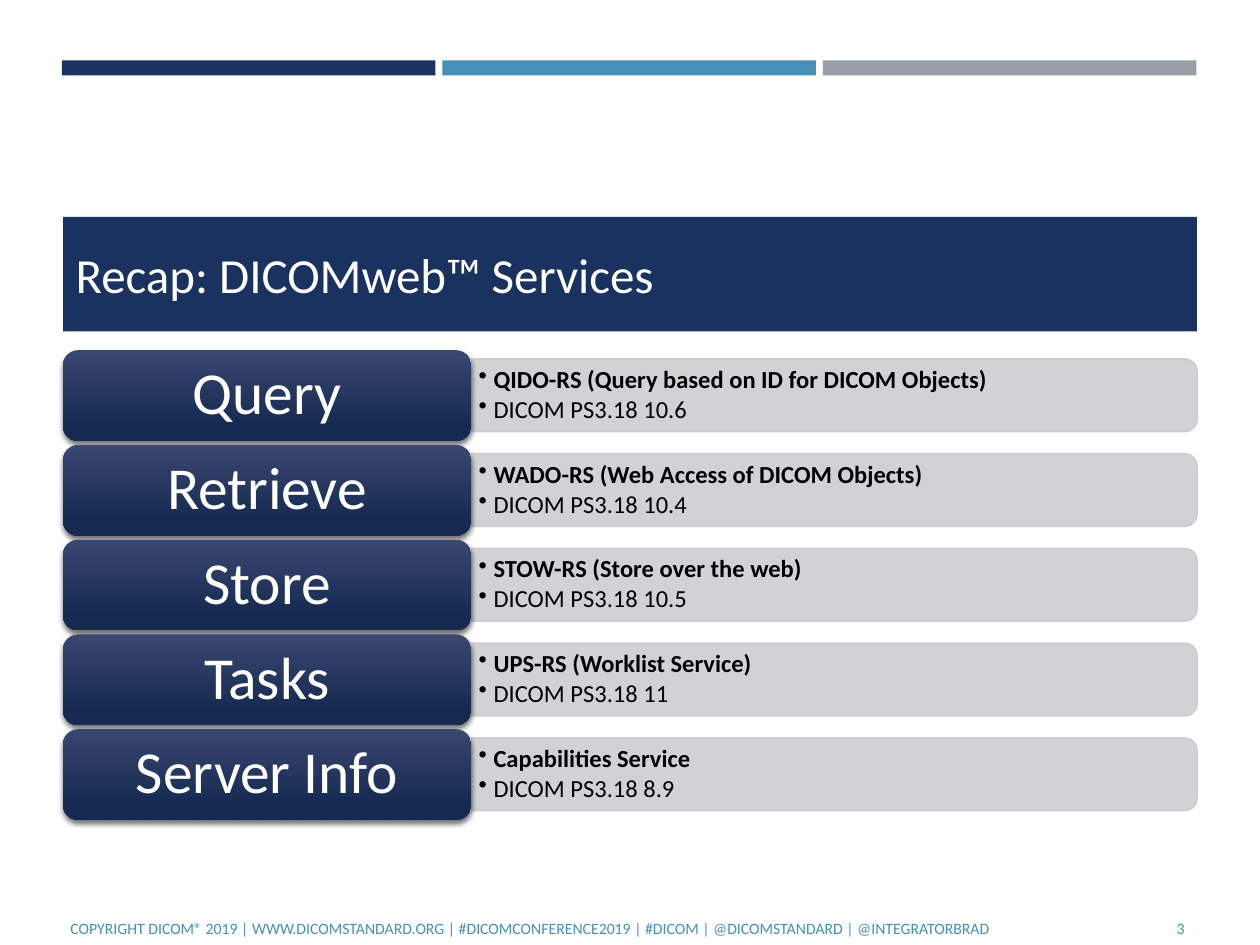
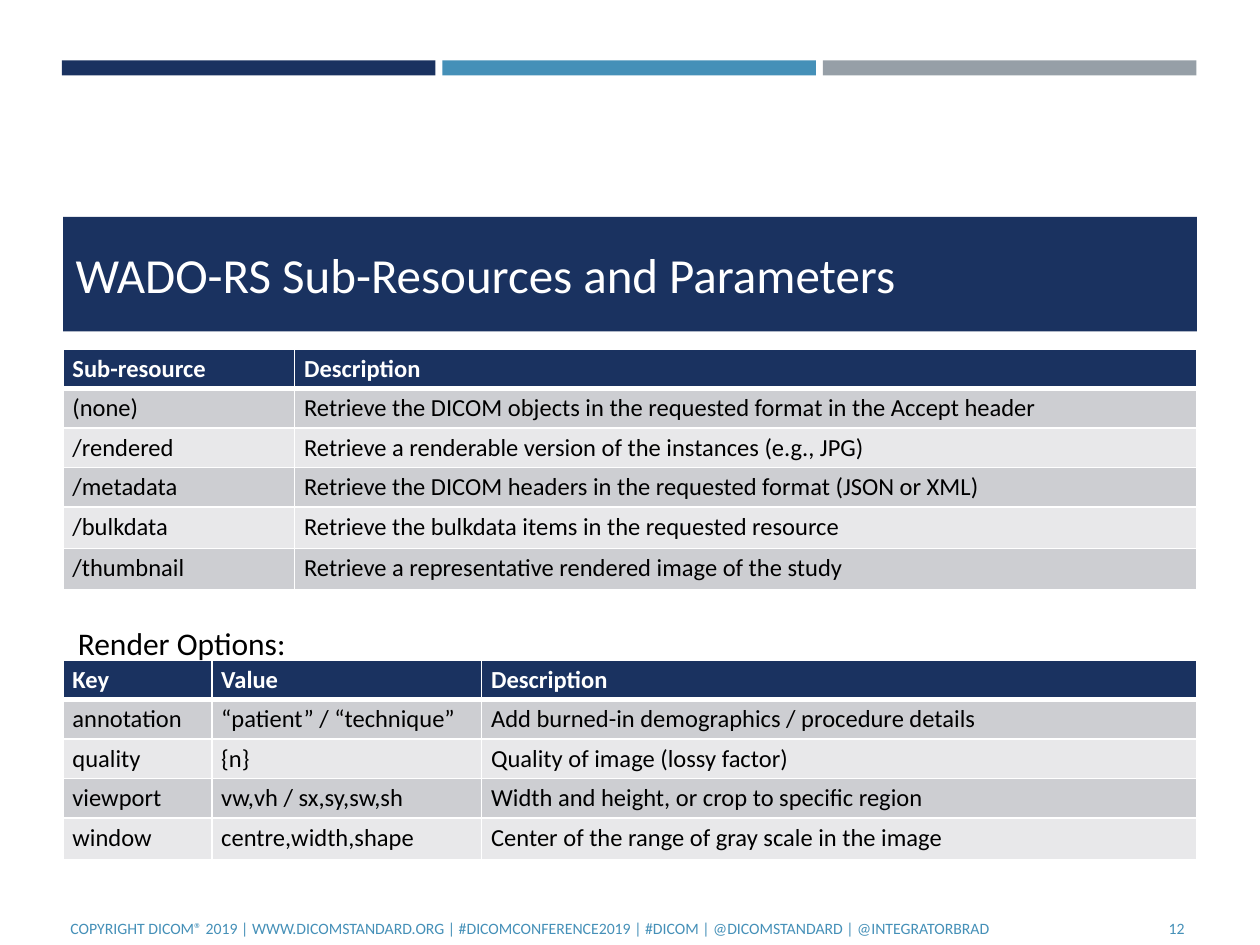
"""Build two slides on DICOMweb services and WADO-RS parameters."""
from dataclasses import dataclass

import lxml.etree
import pptx
import pptx.dml.color
import pptx.enum.dml
import pptx.enum.shapes
import pptx.enum.text
import pptx.oxml.ns
import pptx.util

Cm = pptx.util.Cm
Pt = pptx.util.Pt
RGBColor = pptx.dml.color.RGBColor
MSO_SHAPE = pptx.enum.shapes.MSO_SHAPE
PP_ALIGN = pptx.enum.text.PP_ALIGN
MSO_ANCHOR = pptx.enum.text.MSO_ANCHOR
qn = pptx.oxml.ns.qn

NAVY = RGBColor(0x1A, 0x32, 0x60)
BLUE = RGBColor(0x45, 0x90, 0xB8)
GRAY = RGBColor(0x96, 0x9F, 0xA7)
BAND_DARK = RGBColor(0xCD, 0xCE, 0xD2)
BAND_LIGHT = RGBColor(0xE8, 0xE8, 0xEA)
LABEL_TOP = RGBColor(0x39, 0x47, 0x71)
LABEL_BOTTOM = RGBColor(0x16, 0x2A, 0x51)
WHITE = RGBColor(0xFF, 0xFF, 0xFF)
BLACK = RGBColor(0, 0, 0)

FONT = "Calibri"
MARGIN = 1.27
CONTENT_WIDTH = 22.86
FOOTER = (
    "COPYRIGHT DICOM® 2019 | WWW.DICOMSTANDARD.ORG | #DICOMCONFERENCE2019 | "
    "#DICOM | @DICOMSTANDARD | @INTEGRATORBRAD"
)


@dataclass(frozen=True)
class Box:
    """A place on the slide in centimetres."""
    left: float
    top: float
    width: float
    height: float

    def emu(self) -> tuple:
        """Return the place as lengths."""
        return Cm(self.left), Cm(self.top), Cm(self.width), Cm(self.height)


@dataclass(frozen=True)
class Service:
    """One service with its label and two details."""
    label: str
    name: str
    section: str


@dataclass(frozen=True)
class Grid:
    """A table with its top, column widths, row heights and texts."""
    top: float
    widths: tuple
    heights: tuple
    rows: tuple


SERVICES = (
    Service("Query", "QIDO-RS (Query based on ID for DICOM Objects)", "DICOM PS3.18 10.6"),
    Service("Retrieve", "WADO-RS (Web Access of DICOM Objects)", "DICOM PS3.18 10.4"),
    Service("Store", "STOW-RS (Store over the web)", "DICOM PS3.18 10.5"),
    Service("Tasks", "UPS-RS (Worklist Service)", "DICOM PS3.18 11"),
    Service("Server Info", "Capabilities Service", "DICOM PS3.18 8.9"),
)

RENDER_OPTIONS = Grid(
    13.31, (3.0, 5.44, 14.42), (0.79,) * 4 + (0.84,),
    (
        ("Key", "Value", "Description"),
        ("annotation", "“patient” / “technique”", "Add burned-in demographics / procedure details"),
        ("quality", "{n}", "Quality of image (lossy factor)"),
        ("viewport", "vw,vh / sx,sy,sw,sh", "Width and height, or crop to specific region"),
        ("window", "centre,width,shape", "Center of the range of gray scale in the image"),
    ),
)

SUB_RESOURCES = Grid(
    7.04, (4.67, 18.19), (0.79,) * 4 + (0.84,) * 2,
    (
        ("Sub-resource", "Description"),
        ("(none)", "Retrieve the DICOM objects in the requested format in the Accept header"),
        ("/rendered", "Retrieve a renderable version of the instances (e.g., JPG)"),
        ("/metadata", "Retrieve the DICOM headers in the requested format (JSON or XML)"),
        ("/bulkdata", "Retrieve the bulkdata items in the requested resource"),
        ("/thumbnail", "Retrieve a representative rendered image of the study"),
    ),
)


def format_runs(p, size: float, color: RGBColor, bold: bool = False) -> None:
    """Set the font of every run in a paragraph."""
    for r in p.runs:
        r.font.name = FONT
        r.font.size = Pt(size)
        r.font.bold = bold
        r.font.color.rgb = color


def set_insets(tf, side: float, end: float) -> None:
    """Set the left and right, then top and bottom insets."""
    tf.margin_left = tf.margin_right = Cm(side)
    tf.margin_top = tf.margin_bottom = Cm(end)


def add_filled(slide, kind, box: Box, color: RGBColor):
    """Add a flat shape without outline."""
    sp = slide.shapes.add_shape(kind, *box.emu())
    sp.shadow.inherit = False
    sp.fill.solid()
    sp.fill.fore_color.rgb = color
    sp.line.fill.background()
    return sp


def add_text(slide, box: Box, text: str, size: float, color: RGBColor,
             align=PP_ALIGN.LEFT, anchor=MSO_ANCHOR.MIDDLE, wrap: bool = True):
    """Add a text box holding one style of text."""
    sp = slide.shapes.add_textbox(*box.emu())
    tf = sp.text_frame
    tf.text = text
    tf.word_wrap = wrap
    tf.vertical_anchor = anchor
    for p in tf.paragraphs:
        p.alignment = align
        format_runs(p, size, color)
    return sp


def add_base(prs, title: str, number: int):
    """Add a slide with its bands, title and footer."""
    slide = prs.slides.add_slide(prs.slide_layouts[5])
    for i, color in enumerate((NAVY, BLUE, GRAY)):
        add_filled(slide, MSO_SHAPE.RECTANGLE, Box(1.25 + 7.67 * i, 1.22, 7.53, 0.3), color)
    sp = slide.shapes.title
    sp.left, sp.top, sp.width, sp.height = Box(MARGIN, 4.37, CONTENT_WIDTH, 2.31).emu()
    sp.fill.solid()
    sp.fill.fore_color.rgb = NAVY
    tf = sp.text_frame
    tf.text = title
    tf.auto_size = pptx.enum.text.MSO_AUTO_SIZE.NONE
    tf.vertical_anchor = MSO_ANCHOR.MIDDLE
    p = tf.paragraphs[0]
    p.alignment = PP_ALIGN.LEFT
    format_runs(p, 28, WHITE)
    add_text(slide, Box(1.17, 18.36, 21.49, 0.69), FOOTER, 9, BLUE)
    add_text(slide, Box(23.04, 18.36, 1.09, 0.69), str(number), 9, BLUE, PP_ALIGN.RIGHT)
    return slide


def add_shadow(sp) -> None:
    """Give a shape a soft shadow below it."""
    effects = sp._element.spPr.find(qn("a:effectLst"))
    shadow = lxml.etree.SubElement(effects, qn("a:outerShdw"), blurRad=str(Pt(3)),
                                   dist=str(Pt(2)), dir="5400000", rotWithShape="0")
    color = lxml.etree.SubElement(shadow, qn("a:srgbClr"), val="000000")
    lxml.etree.SubElement(color, qn("a:alpha"), val="55000")


def add_detail_bar(slide, box: Box) -> None:
    """Add a translucent bar with its right corners rounded."""
    upright = Box(box.left + (box.width - box.height) / 2,
                  box.top + (box.height - box.width) / 2, box.height, box.width)
    sp = add_filled(slide, MSO_SHAPE.ROUND_2_SAME_RECTANGLE, upright, BAND_DARK)
    sp.rotation = 90
    sp.line.color.rgb = BAND_DARK
    sp.line.width = Pt(1)
    color = sp._element.spPr.find(qn("a:solidFill")).find(qn("a:srgbClr"))
    lxml.etree.SubElement(color, qn("a:alpha"), val="90000")


def add_details(slide, box: Box, service: Service) -> None:
    """Add the two bulleted details of a service."""
    sp = add_text(slide, box, f"{service.name}\n{service.section}", 14, BLACK)
    tf = sp.text_frame
    set_insets(tf, 0.15, 0.08)
    for p in tf.paragraphs:
        p.line_spacing = 0.9
        p.space_after = Pt(2)
        pPr = p._p.get_or_add_pPr()
        pPr.set("marL", str(Cm(0.3)))
        pPr.set("indent", str(Cm(-0.3)))
        lxml.etree.SubElement(pPr, qn("a:buChar"), char="•")
    format_runs(tf.paragraphs[0], 14, BLACK, True)


def add_label(slide, box: Box, text: str) -> None:
    """Add a gradient label with a shadow."""
    sp = add_filled(slide, MSO_SHAPE.ROUNDED_RECTANGLE, box, NAVY)
    sp.fill.gradient()
    sp.fill.gradient_angle = 270
    for stop, color, position in zip(sp.fill.gradient_stops, (LABEL_TOP, LABEL_BOTTOM), (0, 0.84)):
        stop.color.rgb = color
        stop.position = position
    add_shadow(sp)
    tf = sp.text_frame
    tf.text = text
    tf.vertical_anchor = MSO_ANCHOR.MIDDLE
    set_insets(tf, 0.36, 0.18)
    p = tf.paragraphs[0]
    p.alignment = PP_ALIGN.CENTER
    p.line_spacing = 0.9
    format_runs(p, 34, WHITE)


def add_service(slide, service: Service, top: float) -> None:
    """Add one row of the service list."""
    add_detail_bar(slide, Box(9.5, top + 0.18, 14.63, 1.46))
    add_details(slide, Box(9.5, top + 0.25, 14.55, 1.32), service)
    add_label(slide, Box(MARGIN, top, 8.23, 1.83), service.label)


def set_borders(cell, bottom: float) -> None:
    """Draw white cell borders, with a chosen bottom width."""
    tcPr = cell._tc.get_or_add_tcPr()
    for i, (side, width) in enumerate((("L", 1), ("R", 1), ("T", 1), ("B", bottom))):
        ln = lxml.etree.Element(qn(f"a:ln{side}"), w=str(Pt(width)))
        fill = lxml.etree.SubElement(ln, qn("a:solidFill"))
        lxml.etree.SubElement(fill, qn("a:srgbClr"), val=str(WHITE))
        tcPr.insert(i, ln)


def add_grid(slide, grid: Grid) -> None:
    """Add a banded table with a navy header."""
    box = Box(MARGIN, grid.top, sum(grid.widths), sum(grid.heights))
    table = slide.shapes.add_table(len(grid.rows), len(grid.widths), *box.emu()).table
    for column, width in zip(table.columns, grid.widths):
        column.width = Cm(width)
    for i, (row, height, texts) in enumerate(zip(table.rows, grid.heights, grid.rows)):
        row.height = Cm(height)
        header = i == 0
        band = NAVY if header else BAND_DARK if i % 2 else BAND_LIGHT
        for cell, text in zip(row.cells, texts):
            cell.text = text
            set_insets(cell, 0.19, 0.1)
            cell.fill.solid()
            cell.fill.fore_color.rgb = band
            set_borders(cell, 3 if header else 1)
            format_runs(cell.text_frame.paragraphs[0], 14, WHITE if header else BLACK, header)


def main() -> None:
    """Build and save the slides."""
    prs = pptx.Presentation()
    prs.slide_width, prs.slide_height = Cm(25.4), Cm(19.05)

    slide = add_base(prs, "Recap: DICOMweb™ Services", 3)
    for i, service in enumerate(SERVICES):
        add_service(slide, service, 7.06 + 1.91 * i)

    slide = add_base(prs, "WADO-RS Sub-Resources and Parameters", 12)
    add_grid(slide, RENDER_OPTIONS)
    add_grid(slide, SUB_RESOURCES)
    add_text(slide, Box(1.32, 12.45, 4.85, 1.02), "Render Options:", 18, BLACK,
             anchor=MSO_ANCHOR.TOP, wrap=False)
    prs.save("out.pptx")


if __name__ == "__main__":
    main()
